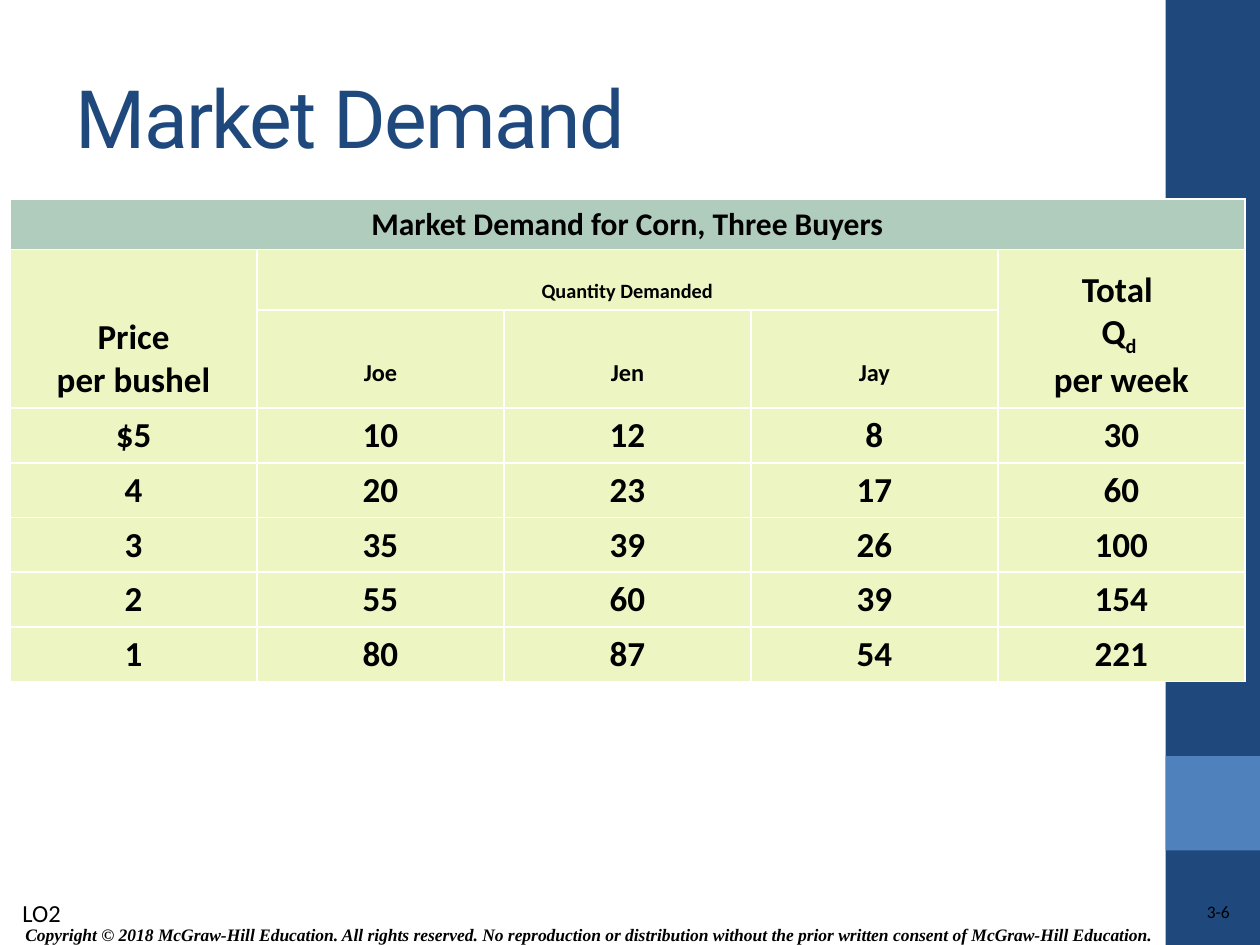
from dataclasses import dataclass
from typing import Any

from lxml.etree import SubElement
from pptx import Presentation
from pptx.dml.color import RGBColor
from pptx.enum.shapes import MSO_SHAPE
from pptx.enum.text import MSO_ANCHOR, PP_ALIGN
from pptx.oxml.ns import qn
from pptx.util import Inches, Pt

NAVY = RGBColor(0x1F, 0x49, 0x7D)
BLUE = RGBColor(0x4F, 0x81, 0xBD)
BLACK = RGBColor(0, 0, 0)
SAGE = RGBColor(0xB0, 0xCC, 0xBD)
LIME = RGBColor(0xED, 0xF5, 0xC3)


@dataclass
class Box:
    left: float
    top: float
    width: float
    height: float

    def lengths(self) -> list[int]:
        return [Inches(v) for v in (self.left, self.top, self.width, self.height)]


@dataclass
class Bar:
    box: Box
    color: RGBColor


@dataclass
class Label:
    box: Box
    text: str
    size: int
    face: str = "Calibri"
    strong: bool = False
    align: PP_ALIGN = PP_ALIGN.LEFT
    anchor: MSO_ANCHOR = MSO_ANCHOR.TOP
    inset: bool = True
    wrap: bool = True


@dataclass
class Head:
    row: int
    col: int
    end_row: int
    end_col: int
    lines: list[str]
    size: int = 20
    sub: bool = False
    anchor: MSO_ANCHOR = MSO_ANCHOR.BOTTOM


BARS = [Bar(Box(9.25, 0, 0.75, 7.5), NAVY), Bar(Box(9.25, 6, 0.75, 0.75), BLUE)]
LABELS = [
    Label(Box(0.06, 7.28, 9.22, 0.28),
          "Copyright © 2018 McGraw-Hill Education. All rights reserved. No reproduction or "
          "distribution without the prior written consent of McGraw-Hill Education.",
          10, "Times New Roman", True, PP_ALIGN.CENTER, MSO_ANCHOR.MIDDLE),
    Label(Box(7.81, 7.15, 1.95, 0.2), "3-6", 10, align=PP_ALIGN.RIGHT, inset=False),
    Label(Box(0.08, 7.08, 0.53, 0.34), "LO2", 14, wrap=False),
]
HEADS = [
    Head(0, 0, 0, 4, ["Market Demand for Corn, Three Buyers"], 18),
    Head(1, 0, 2, 0, ["Price", "per bushel"]),
    Head(1, 1, 1, 3, ["Quantity Demanded"], sub=True),
    Head(1, 4, 2, 4, ["Total ", "Q", "per week"]),
] + [
    Head(2, col, 2, col, [name], 24, True, MSO_ANCHOR.MIDDLE)
    for col, name in enumerate(["Joe", "Jen", "Jay"], 1)
]
DATA = [
    ("$5", 10, 12, 8, 30),
    ("4", 20, 23, 17, 60),
    ("3", 35, 39, 26, 100),
    ("2", 55, 60, 39, 154),
    ("1", 80, 87, 54, 221),
]
HEIGHTS = [0.4, 0.32, 0.78] + [0.43] * len(DATA)


def style(para: Any, face: str, size: int, color: RGBColor, bold: bool = False) -> None:
    font = para.font
    font.name, font.size, font.bold = face, Pt(size), bold
    font.color.rgb = color


def lower(run: Any) -> None:
    run._r.get_or_add_rPr().set("baseline", "-25000")


def draw_bar(slide: Any, bar: Bar) -> None:
    shape = slide.shapes.add_shape(MSO_SHAPE.RECTANGLE, *bar.box.lengths())
    shape.shadow.inherit = False
    shape.fill.solid()
    shape.fill.fore_color.rgb = bar.color
    shape.line.fill.background()


def draw_label(slide: Any, label: Label) -> None:
    frame = slide.shapes.add_textbox(*label.box.lengths()).text_frame
    frame.word_wrap = label.wrap
    frame.vertical_anchor = label.anchor
    if not label.inset:
        frame.margin_left = frame.margin_right = 0
        frame.margin_top = frame.margin_bottom = 0
    para = frame.paragraphs[0]
    para.text = label.text
    para.alignment = label.align
    style(para, label.face, label.size, BLACK, label.strong)
    para.font.italic = label.strong


def draw_title(slide: Any) -> None:
    title = slide.shapes.title
    title.left, title.top, title.width, title.height = Box(0.5, 0.3, 8.33, 1.25).lengths()
    title.text_frame.vertical_anchor = MSO_ANCHOR.MIDDLE
    para = title.text_frame.paragraphs[0]
    para.text = "Market Demand"
    para.alignment = PP_ALIGN.LEFT
    style(para, "Roboto", 46, NAVY)
    para.runs[0]._r.get_or_add_rPr().set("spc", "-100")


def edge(cell: Any) -> None:
    props = cell._tc.get_or_add_tcPr()
    for side in ("a:lnL", "a:lnR", "a:lnT", "a:lnB"):
        line = SubElement(props, qn(side), w=str(Pt(1)))
        fill = SubElement(line, qn("a:solidFill"))
        SubElement(fill, qn("a:srgbClr"), val="FFFFFF")


def write(cell: Any, lines: list[str], size: int, anchor: MSO_ANCHOR) -> None:
    cell.text = "\n".join(lines)
    cell.vertical_anchor = anchor
    for para in cell.text_frame.paragraphs:
        para.alignment = PP_ALIGN.CENTER
        style(para, "Calibri", size, BLACK, True)


def draw_table(slide: Any) -> None:
    box = Box(0.08, 1.58, 9.8, sum(HEIGHTS))
    table = slide.shapes.add_table(len(HEIGHTS), 5, *box.lengths()).table
    table.first_row = table.horz_banding = False
    for row, height in zip(table.rows, HEIGHTS):
        row.height = Inches(height)
    for row in range(len(HEIGHTS)):
        for col in range(5):
            cell = table.cell(row, col)
            if row:
                edge(cell)
            cell.fill.solid()
            cell.fill.fore_color.rgb = LIME if row else SAGE
    for head in HEADS:
        cell = table.cell(head.row, head.col)
        if (head.row, head.col) != (head.end_row, head.end_col):
            cell.merge(table.cell(head.end_row, head.end_col))
        write(cell, head.lines, head.size, head.anchor)
        if head.sub:
            lower(cell.text_frame.paragraphs[0].runs[0])
    mark = table.cell(1, 4).text_frame.paragraphs[1].add_run()
    mark.text = "d "
    lower(mark)
    for row, values in enumerate(DATA, 3):
        for col, value in enumerate(values):
            anchor = MSO_ANCHOR.TOP if col else MSO_ANCHOR.MIDDLE
            write(table.cell(row, col), [str(value)], 20, anchor)


def main() -> None:
    deck = Presentation()
    deck.slide_width, deck.slide_height = Inches(10), Inches(7.5)
    slide = deck.slides.add_slide(deck.slide_layouts[5])
    for bar in BARS:
        draw_bar(slide, bar)
    for label in LABELS:
        draw_label(slide, label)
    draw_title(slide)
    draw_table(slide)
    deck.save("out.pptx")


if __name__ == "__main__":
    main()
